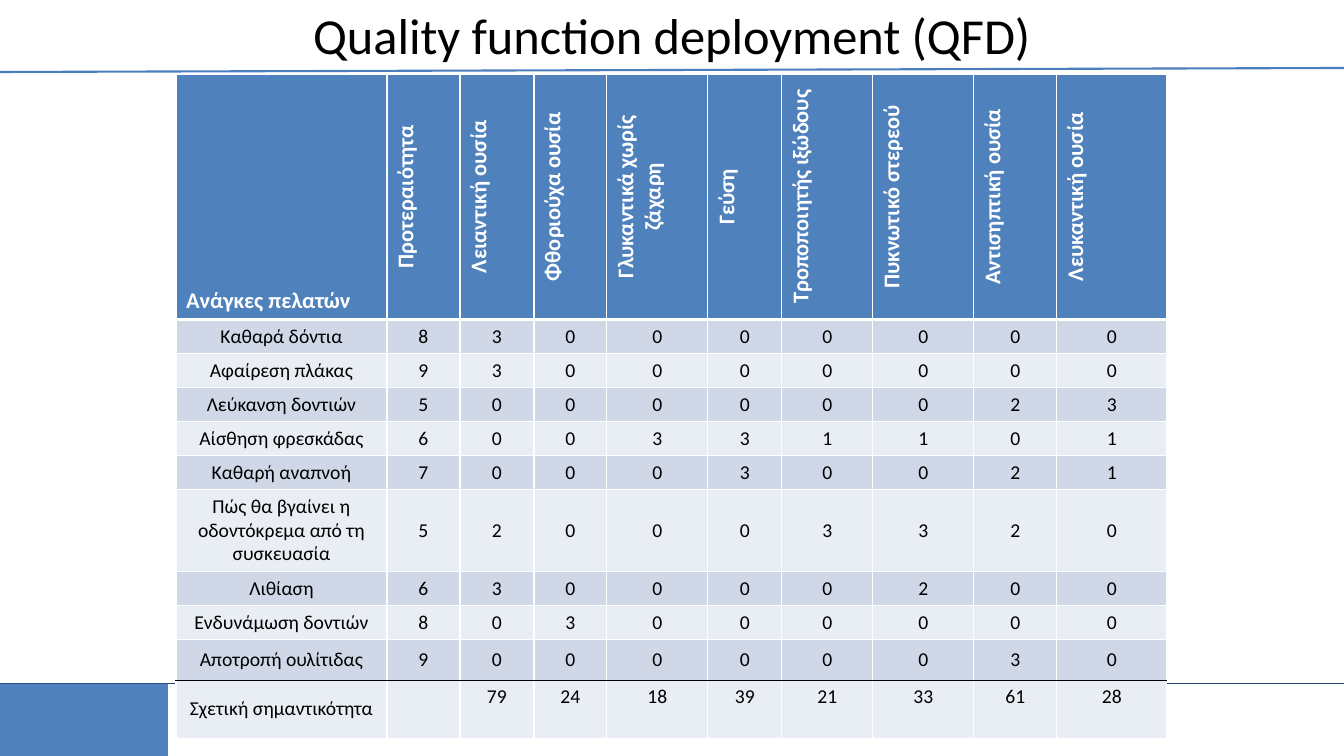
from dataclasses import dataclass

from lxml.etree import SubElement
from pptx import Presentation
from pptx.dml.color import RGBColor
from pptx.enum.shapes import MSO_CONNECTOR, MSO_SHAPE
from pptx.enum.text import MSO_ANCHOR, PP_ALIGN
from pptx.oxml.ns import qn
from pptx.slide import Slide
from pptx.table import Table, _Cell
from pptx.util import Emu, Pt

EMU_PER_INCH = 914400
PX_PER_INCH = 100.8
FONT = "Calibri"
WHITE = RGBColor(0xFF, 0xFF, 0xFF)
BLACK = RGBColor(0x00, 0x00, 0x00)
BLUE = RGBColor(0x4F, 0x81, 0xBD)
NAVY = RGBColor(0x1F, 0x49, 0x7D)
RULE_BLUE = RGBColor(0x4B, 0x7E, 0xBC)
BAND_DARK = RGBColor(0xD0, 0xD8, 0xE8)
BAND_LIGHT = RGBColor(0xE9, 0xED, 0xF4)


@dataclass(frozen=True)
class Rule:
    x1: int
    y1: int
    x2: int
    y2: int
    color: RGBColor
    width: float


@dataclass(frozen=True)
class Edge:
    color: RGBColor = WHITE
    width: float = 1


@dataclass(frozen=True)
class Need:
    name: str
    height: int
    scores: tuple[int, ...]


@dataclass(frozen=True)
class CellStyle:
    fill: RGBColor
    size: int = 14
    color: RGBColor = BLACK
    bold: bool = False
    align: PP_ALIGN = PP_ALIGN.CENTER
    anchor: MSO_ANCHOR = MSO_ANCHOR.MIDDLE
    top: Edge = Edge()
    bottom: Edge = Edge()
    upright: bool = True


RULES = (
    Rule(1344, 684, 0, 684, NAVY, 0.75),
    Rule(0, 72, 1344, 68, RULE_BLUE, 1.5),
)
COLUMN_WIDTHS = (211, 73, 74, 73, 101, 74, 91, 101, 83, 110)
HEADER_HEIGHT = 244
TOTAL_HEIGHT = 58
CORNER = "Ανάγκες πελατών"
HEADINGS = (
    "Προτεραιότητα", "Λειαντική ουσία", "Φθοριούχα ουσία",
    "Γλυκαντικά χωρίς ζάχαρη", "Γεύση", "Τροποποιητής ιξώδους",
    "Πυκνωτικό στερεού", "Αντισηπτική ουσία", "Λευκαντική ουσία",
)
NEEDS = (
    Need("Καθαρά δόντια", 34, (8, 3, 0, 0, 0, 0, 0, 0, 0)),
    Need("Αφαίρεση πλάκας", 34, (9, 3, 0, 0, 0, 0, 0, 0, 0)),
    Need("Λεύκανση δοντιών", 34, (5, 0, 0, 0, 0, 0, 0, 2, 3)),
    Need("Αίσθηση φρεσκάδας", 34, (6, 0, 0, 3, 3, 1, 1, 0, 1)),
    Need("Καθαρή αναπνοή", 34, (7, 0, 0, 0, 3, 0, 0, 2, 1)),
    Need("Πώς θα βγαίνει η οδοντόκρεμα από τη συσκευασία", 82,
         (5, 2, 0, 0, 0, 3, 3, 2, 0)),
    Need("Λιθίαση", 34, (6, 3, 0, 0, 0, 0, 2, 0, 0)),
    Need("Ενδυνάμωση δοντιών", 34, (8, 0, 3, 0, 0, 0, 0, 0, 0)),
    Need("Αποτροπή ουλίτιδας", 41, (9, 0, 0, 0, 0, 0, 0, 3, 0)),
)
TOTAL_LABEL = "Σχετική σημαντικότητα"
TOTALS = (79, 24, 18, 39, 21, 33, 61, 28)
HEADER_EDGE = Edge(WHITE, 3)
TOTAL_EDGE = Edge(BLACK, 1)


def px(value: int) -> Emu:
    return Emu(round(value * EMU_PER_INCH / PX_PER_INCH))


def add_rule(page: Slide, rule: Rule) -> None:
    line = page.shapes.add_connector(
        MSO_CONNECTOR.STRAIGHT, px(rule.x1), px(rule.y1), px(rule.x2), px(rule.y2))
    line.line.color.rgb = rule.color
    line.line.width = Pt(rule.width)
    SubElement(line._element.spPr, qn("a:effectLst"))


def add_corner_block(page: Slide) -> None:
    block = page.shapes.add_shape(
        MSO_SHAPE.RECTANGLE, px(0), px(684), px(168), px(72))
    block.shadow.inherit = False
    block.fill.solid()
    block.fill.fore_color.rgb = BLUE
    block.line.fill.background()


def set_title(page: Slide, text: str) -> None:
    title = page.shapes.title
    title.left, title.top, title.width, title.height = px(0), px(0), px(1344), px(68)
    title.text_frame.vertical_anchor = MSO_ANCHOR.MIDDLE
    para = title.text_frame.paragraphs[0]
    para.alignment = PP_ALIGN.CENTER
    span = para.add_run()
    span.text = text
    span.font.name = FONT
    span.font.size = Pt(36)
    span.font.color.rgb = BLACK


def set_borders(cell: _Cell, style: CellStyle) -> None:
    properties = cell._tc.get_or_add_tcPr()
    edges = {"lnL": Edge(), "lnR": Edge(), "lnT": style.top, "lnB": style.bottom}
    for tag, edge in edges.items():
        line = SubElement(properties, qn(f"a:{tag}"), w=str(Pt(edge.width)))
        fill = SubElement(line, qn("a:solidFill"))
        SubElement(fill, qn("a:srgbClr"), val=str(edge.color))


def fill_cell(cell: _Cell, text: str, style: CellStyle) -> None:
    set_borders(cell, style)
    cell.fill.solid()
    cell.fill.fore_color.rgb = style.fill
    cell.vertical_anchor = style.anchor
    if not style.upright:
        cell._tc.get_or_add_tcPr().set("vert", "vert270")
    if not text:
        return
    para = cell.text_frame.paragraphs[0]
    para.alignment = style.align
    span = para.add_run()
    span.text = text
    span.font.name = FONT
    span.font.size = Pt(style.size)
    span.font.bold = style.bold
    span.font.color.rgb = style.color


def fill_row(table: Table, row: int, height: int, label: str, label_style: CellStyle,
             values: tuple[str, ...], value_style: CellStyle) -> None:
    table.rows[row].height = px(height)
    fill_cell(table.cell(row, 0), label, label_style)
    for column, value in enumerate(values, start=1):
        fill_cell(table.cell(row, column), value, value_style)


def add_matrix(page: Slide) -> None:
    height = HEADER_HEIGHT + sum(need.height for need in NEEDS) + TOTAL_HEIGHT
    table = page.shapes.add_table(
        len(NEEDS) + 2, len(COLUMN_WIDTHS), px(176), px(74),
        px(sum(COLUMN_WIDTHS)), px(height)).table
    table.horz_banding = False
    table.first_row = False
    for column, width in zip(table.columns, COLUMN_WIDTHS):
        column.width = px(width)

    corner = CellStyle(BLUE, 16, WHITE, True, PP_ALIGN.LEFT, MSO_ANCHOR.BOTTOM,
                       bottom=HEADER_EDGE)
    heading = CellStyle(BLUE, 16, WHITE, True, bottom=HEADER_EDGE, upright=False)
    fill_row(table, 0, HEADER_HEIGHT, CORNER, corner, HEADINGS, heading)

    for row, need in enumerate(NEEDS, start=1):
        style = CellStyle(
            BAND_DARK if row % 2 else BAND_LIGHT,
            top=HEADER_EDGE if row == 1 else Edge(),
            bottom=TOTAL_EDGE if row == len(NEEDS) else Edge())
        fill_row(table, row, need.height, need.name, style,
                 tuple(map(str, need.scores)), style)

    label = CellStyle(BAND_LIGHT, top=TOTAL_EDGE)
    total = CellStyle(BAND_LIGHT, anchor=MSO_ANCHOR.TOP, top=TOTAL_EDGE)
    fill_row(table, len(NEEDS) + 1, TOTAL_HEIGHT, TOTAL_LABEL, label,
             ("", *map(str, TOTALS)), total)


def main() -> None:
    deck = Presentation()
    deck.slide_width, deck.slide_height = px(1344), px(756)
    page = deck.slides.add_slide(deck.slide_layouts[5])
    for rule in RULES:
        add_rule(page, rule)
    add_corner_block(page)
    set_title(page, "Quality function deployment (QFD)")
    add_matrix(page)
    deck.save("out.pptx")


if __name__ == "__main__":
    main()
